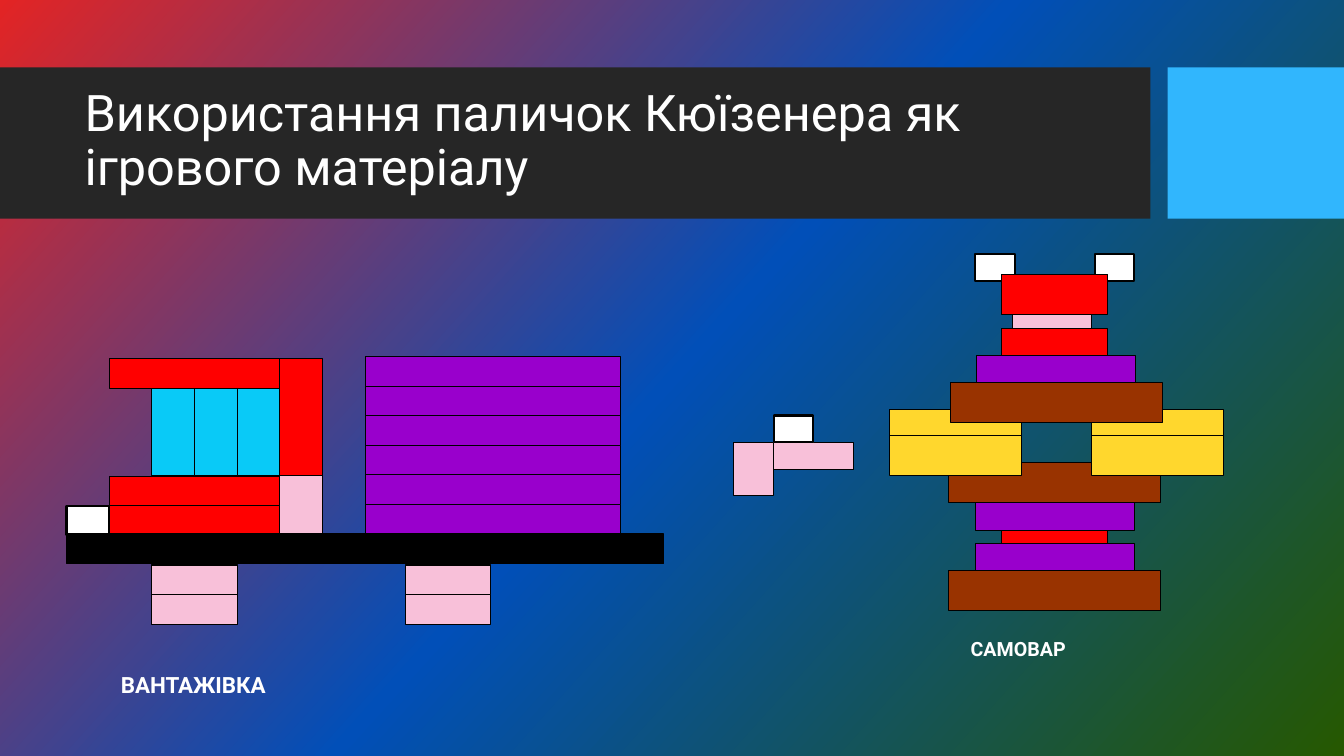
import copy
from typing import NamedTuple

import pptx
import pptx.dml.color
import pptx.enum.shapes
import pptx.enum.text
import pptx.util

WIDE, HIGH = 13.33, 7.5
FONT = "Roboto"
RED, PLUM, SKY, PINK = "FF0000", "9900CC", "09CAF7", "F8C0D9"
BROWN, GOLD, WHITE, BLACK = "993300", "FFD72D", "FFFFFF", "000000"


class Grid(NamedTuple):
    """Start point and cell size in inches."""
    left: float
    top: float
    col: float
    row: float


class Rod(NamedTuple):
    """Place and size in columns and rows of a grid."""
    col: float
    row: float
    cols: float
    rows: float
    fill: str


class Label(NamedTuple):
    """Place and size in inches, with its text style."""
    text: str
    left: float
    top: float
    width: float
    height: float
    size: int
    bold: bool = True
    middle: bool = True
    center: bool = False


SLIDE = Grid(0, 0, WIDE / 100, HIGH / 100)
BANDS = [
    Rod(0, 8.93, 85.6, 20, "262626"),
    Rod(86.87, 8.93, 13.13, 20, "31B6FD"),
]

TRUCK = Grid(0.66, 3.54, 0.423, 0.293)
LORRY = [
    *[Rod(7, row, 6, 1, PLUM) for row in range(6)],
    *[Rod(col, 1.07, 1, 2.95, SKY) for col in (2, 3, 4)],
    Rod(1, 0.07, 4, 1, RED),
    Rod(5, 0.07, 1, 3.95, RED),
    *[Rod(1, row, 4, 1, RED) for row in (4.05, 5.05)],
    Rod(0, 5.05, 1, 1, WHITE),
    Rod(5, 4.03, 1, 2, PINK),
    *[Rod(col, 6, 7, 1, BLACK) for col in (0, 7)],
    *[Rod(col, row, 2, 1, PINK) for col in (2, 7.95) for row in (8.05, 7.05)],
]

URN = Grid(9.41, 2.52, 0.263, 0.133)
SAMOVAR = [
    Rod(2, 19.55, 4, 3, RED),
    *[Rod(1, row, 6, 3, PLUM) for row in (21.6, 17.6)],
    Rod(0, 23.6, 8, 3, BROWN),
    Rod(-8.1, 14.05, 1.5, 4, PINK),
    Rod(-6.6, 14.05, 3, 2, PINK),
    Rod(-6.6, 12.05, 1.5, 2, WHITE),
    Rod(0, 15.55, 8, 3, BROWN),
    *[Rod(col, row, 5, 3, GOLD) for col in (-2.25, 5.37) for row in (11.6, 13.55)],
    Rod(2.4, 4.05, 3, 2, PINK),
    *[Rod(col, 0, 1.5, 2, WHITE) for col in (1, 5.5)],
    *[Rod(2, row, 4, 3, RED) for row in (5.55, 1.5)],
    Rod(1.05, 7.6, 6, 3, PLUM),
    Rod(0.05, 9.55, 8, 3, BROWN),
]

LABELS = [
    Label("Використання паличок Кюїзенера як ігрового матеріалу",
          0.74, 0.82, 10.51, 1.18, 36, bold=False),
    Label("ВАНТАЖІВКА", 1.1, 6.45, 5.56, 0.71, 16),
    Label("САМОВАР", 7.32, 6.27, 5.56, 0.76, 14, middle=False, center=True),
]


def tint(code: str) -> pptx.dml.color.RGBColor:
    return pptx.dml.color.RGBColor.from_string(code)


def paint(slide) -> None:
    """Fill the background with a slanted three-colour blend."""
    fill = slide.background.fill
    fill.gradient()
    fill.gradient_angle = 318
    first = slide.element.xpath(".//a:gs")[0]
    first.addnext(copy.deepcopy(first))
    blend = [(0, "E32424"), (0.5, "014FB8"), (1, "265800")]
    for stop, (place, code) in zip(fill.gradient_stops, blend):
        stop.position = place
        stop.color.rgb = tint(code)


def build(shapes, grid: Grid, rods: list[Rod], edge: bool = True) -> None:
    """Draw rods on a grid, back to front."""
    for rod in rods:
        box = shapes.add_shape(
            pptx.enum.shapes.MSO_SHAPE.RECTANGLE,
            pptx.util.Inches(grid.left + rod.col * grid.col),
            pptx.util.Inches(grid.top + rod.row * grid.row),
            pptx.util.Inches(rod.cols * grid.col),
            pptx.util.Inches(rod.rows * grid.row))
        box.shadow.inherit = False
        box.fill.solid()
        box.fill.fore_color.rgb = tint(rod.fill)
        if edge:
            box.line.color.rgb = tint(BLACK)
            box.line.width = pptx.util.Pt(1.5 if rod.fill == WHITE else 0.75)
        else:
            box.line.fill.background()


def write(shapes, label: Label) -> None:
    area = (label.left, label.top, label.width, label.height)
    frame = shapes.add_textbox(*map(pptx.util.Inches, area)).text_frame
    frame.word_wrap = True
    anchor = pptx.enum.text.MSO_ANCHOR
    frame.vertical_anchor = anchor.MIDDLE if label.middle else anchor.TOP
    line = frame.paragraphs[0]
    line.text = label.text
    if label.middle:
        line.line_spacing = 0.9
    if label.center:
        line.alignment = pptx.enum.text.PP_ALIGN.CENTER
    line.font.name = FONT
    line.font.size = pptx.util.Pt(label.size)
    line.font.bold = label.bold
    line.font.color.rgb = tint(WHITE)


def main() -> None:
    deck = pptx.Presentation()
    deck.slide_width = pptx.util.Inches(WIDE)
    deck.slide_height = pptx.util.Inches(HIGH)
    slide = deck.slides.add_slide(deck.slide_layouts[6])
    paint(slide)
    build(slide.shapes, SLIDE, BANDS, edge=False)
    for grid, rods in ((TRUCK, LORRY), (URN, SAMOVAR)):
        build(slide.shapes.add_group_shape().shapes, grid, rods)
    for label in LABELS:
        write(slide.shapes, label)
    deck.save("out.pptx")


if __name__ == "__main__":
    main()
